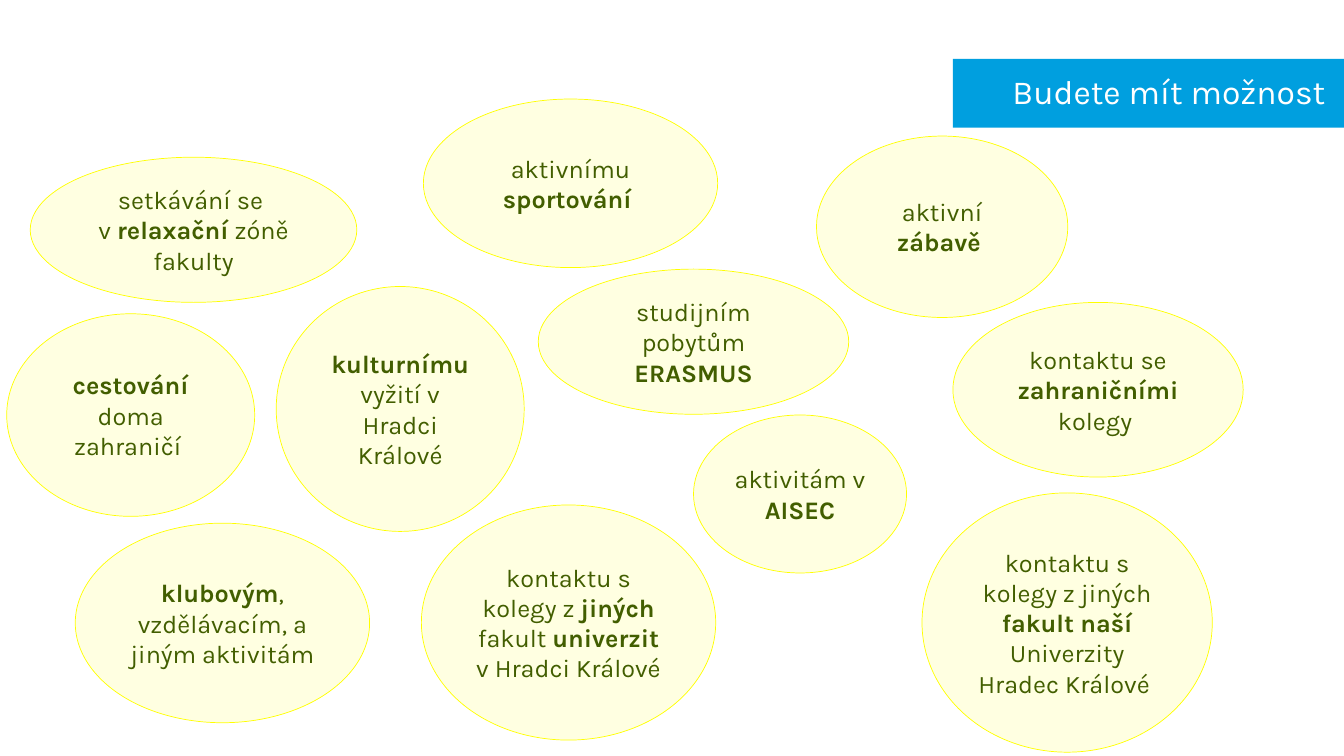
from pptx import Presentation
from pptx.dml.color import RGBColor
from pptx.enum.shapes import MSO_SHAPE as Shape
from pptx.enum.text import MSO_ANCHOR as Anchor, PP_ALIGN as Align
from pptx.util import Inches, Pt

BLUE = RGBColor(0x00, 0x9F, 0xDF)
WHITE = RGBColor(0xFF, 0xFF, 0xFF)
CREAM = RGBColor(0xFF, 0xFF, 0xE1)
YELLOW = RGBColor(0xFF, 0xFF, 0x00)
GREEN = RGBColor(0x42, 0x5E, 0x00)

# left, top, width, height in percent of the slide; ** switches bold on and off
OPPORTUNITIES = [
    (2.25, 20.8, 24.3, 19.2, "setkávání se \nv **relaxační** zóně fakulty"),
    (31.5, 13.1, 21.9, 22.3, "aktivnímu **sportování **"),
    (0.5, 41.5, 18.45, 26.8, "**cestování **doma zahraničí "),
    (20.55, 37.9, 18.45, 32.4, "**kulturnímu **vyžití v Hradci Králové"),
    (5.6, 69.2, 21.9, 26.4, "**klubovým**,\nvzdělávacím, a jiným aktivitám"),
    (31.35, 66.8, 21.9, 31.1,
     "kontaktu s kolegy z **jiných** fakult **univerzit** v Hradci Králové "),
    (40.05, 35.6, 23.1, 19.2, "studijním pobytům **ERASMUS**"),
    (51.6, 54.9, 15.85, 20.9, "aktivitám v **AISEC**"),
    (68.6, 65.2, 21.6, 34.3,
     "kontaktu s kolegy z jiných **fakult naší **Univerzity Hradec Králové "),
    (70.9, 40, 21.6, 23.1, "kontaktu se **zahraničními **kolegy "),
    (60.75, 18, 18.7, 24, "aktivní **zábavě **"),
]


class SlideBuilder:
    font_name = "Karla"

    def __init__(self, deck):
        self.deck = deck
        self.page = deck.slides.add_slide(deck.slide_layouts[6])

    def shape(self, kind, left, top, width, height, fill):
        wide, high = self.deck.slide_width / 100, self.deck.slide_height / 100
        box = self.page.shapes.add_shape(
            kind, round(left * wide), round(top * high),
            round(width * wide), round(height * high))
        box.shadow.inherit = False
        box.fill.solid()
        box.fill.fore_color.rgb = fill
        return box

    def label(self, box, text, size, color, align):
        frame = box.text_frame
        frame.word_wrap = True
        frame.vertical_anchor = Anchor.MIDDLE
        for number, line in enumerate(text.split("\n")):
            para = frame.add_paragraph() if number else frame.paragraphs[0]
            para.alignment = align
            for part, words in enumerate(line.split("**")):
                if words:
                    span = para.add_run()
                    span.text = words
                    span.font.color.rgb = color
                    style = {"name": self.font_name, "size": Pt(size),
                             "bold": part % 2 == 1}
                    for key, value in style.items():
                        setattr(span.font, key, value)

    def banner(self, left, top, width, height, text):
        box = self.shape(Shape.RECTANGLE, left, top, width, height, BLUE)
        box.line.fill.background()
        self.label(box, text, 24, WHITE, Align.LEFT)
        box.text_frame.margin_left = Inches(0.59)
        box.text_frame.paragraphs[0].line_spacing = 0.9

    def bubble(self, left, top, width, height, text):
        box = self.shape(Shape.OVAL, left, top, width, height, CREAM)
        box.line.color.rgb = YELLOW
        box.line.width = Pt(0.5)
        self.label(box, text, 18, GREEN, Align.CENTER)


def main():
    deck = Presentation()
    deck.slide_width, deck.slide_height = Inches(13.33), Inches(7.5)
    slide = SlideBuilder(deck)
    slide.banner(70.9, 7.8, 29.1, 9.1, "Budete mít možnost")
    for opportunity in OPPORTUNITIES:
        slide.bubble(*opportunity)
    deck.save("out.pptx")


if __name__ == "__main__":
    main()
